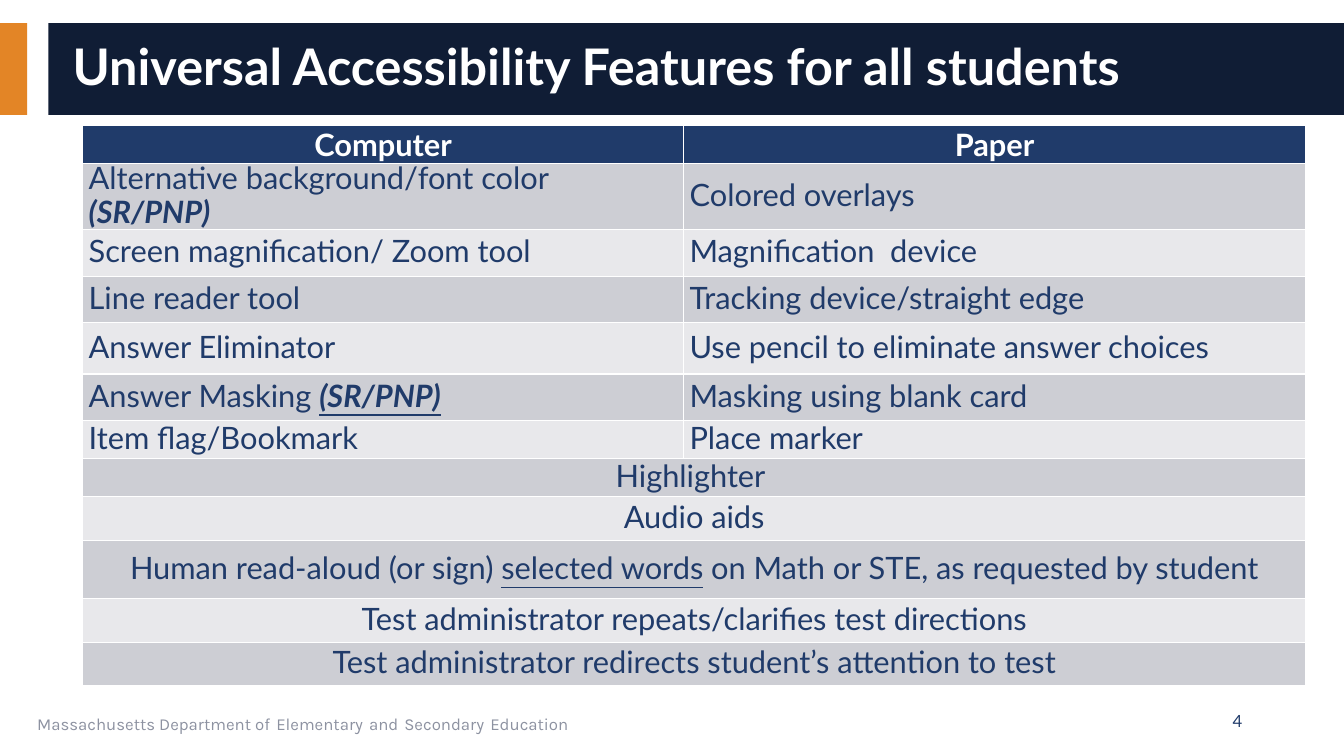
import pptx
import pptx.util
import pptx.dml.color
import pptx.enum.shapes
import pptx.enum.text
import pptx.oxml.ns
import lxml.etree

Inches = pptx.util.Inches
Pt = pptx.util.Pt
ALIGN = pptx.enum.text.PP_ALIGN
ANCHOR = pptx.enum.text.MSO_ANCHOR

COLORS = {
    "orange": "E38526",
    "dark": "101D35",
    "navy": "203B6A",
    "gray": "8D92A1",
    "band_dark": "CDCED4",
    "band_light": "E8E8EB",
    "white": "FFFFFF",
}

TITLE = "Universal Accessibility Features for all students"
FOOTER = ["Massachusetts Department of", "Elementary", "and", "Secondary", "Education"]
SLIDE_NUMBER = "4"

EMPHASIS = {"bold": True, "italic": True}
UNDERLINED = {"bold": True, "italic": True, "underline": True}
HEADER = ["Computer", "Paper"]
FEATURES = [
    (0.63, [[("Alternative background/font color ", {}), ("(", EMPHASIS),
             ("SR/PNP", UNDERLINED), (")", EMPHASIS)], "Colored overlays"]),
    (0.46, ["Screen magnification/ Zoom tool", "Magnification  device"]),
    (0.46, ["Line reader tool", "Tracking device/straight edge"]),
    (0.51, ["Answer Eliminator", "Use pencil to eliminate answer choices"]),
    (0.46, [[("Answer Masking ", {}), ("(SR/PNP)", UNDERLINED)], "Masking using blank card"]),
    (0.38, ["Item flag/Bookmark", "Place marker"]),
    (0.38, ["Highlighter "]),
    (0.43, ["Audio aids"]),
    (0.58, [[("Human read-aloud (or sign) ", {}), ("selected words", {"underline": True}),
             (" on Math or STE, as requested by student", {})]]),
    (0.43, ["Test administrator repeats/clarifies test directions"]),
    (0.43, ["Test administrator redirects student’s attention to test"]),
]
HEADER_HEIGHT = 0.38
COLUMN_WIDTHS = [5.96, 6.17]
BARS = [(0, 0.27, "orange"), (0.48, 12.86, "dark")]


def rgb(name):
    return pptx.dml.color.RGBColor.from_string(COLORS[name])


def write_text(frame, text, size=22, color="navy", font="Lato", align=ALIGN.LEFT,
               anchor=ANCHOR.MIDDLE, line_spacing=None, bold=False):
    frame.word_wrap = True
    frame.vertical_anchor = anchor
    paragraph = frame.paragraphs[0]
    paragraph.alignment = align
    if line_spacing:
        paragraph.line_spacing = line_spacing
    parts = [(text, {})] if isinstance(text, str) else text
    for content, style in parts:
        run = paragraph.add_run()
        run.text = content
        run.font.name = style.get("font", font)
        run.font.size = Pt(style.get("size", size))
        run.font.bold = style.get("bold", bold)
        run.font.italic = style.get("italic", False)
        run.font.underline = style.get("underline", False)
        run.font.color.rgb = rgb(style.get("color", color))


def add_borders(cell):
    properties = cell._tc.get_or_add_tcPr()
    for position, side in enumerate(["lnL", "lnR", "lnT", "lnB"]):
        line = lxml.etree.Element(pptx.oxml.ns.qn("a:" + side), w=str(Pt(1)))
        fill = lxml.etree.SubElement(line, pptx.oxml.ns.qn("a:solidFill"))
        lxml.etree.SubElement(fill, pptx.oxml.ns.qn("a:srgbClr"), val=COLORS["white"])
        properties.insert(position, line)


def format_cell(cell, fill, margin_x, margin_y):
    cell.fill.solid()
    cell.fill.fore_color.rgb = rgb(fill)
    cell.vertical_anchor = ANCHOR.MIDDLE
    cell.margin_left = cell.margin_right = Inches(margin_x)
    cell.margin_top = cell.margin_bottom = Inches(margin_y)
    add_borders(cell)


def add_bars(slide):
    for left, width, color in BARS:
        bar = slide.shapes.add_shape(pptx.enum.shapes.MSO_SHAPE.RECTANGLE, Inches(left),
                                     Inches(0.23), Inches(width), Inches(0.91))
        bar.shadow.inherit = False
        bar.fill.solid()
        bar.fill.fore_color.rgb = rgb(color)
        bar.line.fill.background()


def add_title(slide):
    title = slide.shapes.title
    slide.shapes._spTree.append(title._element)
    title.left, title.top = Inches(0.62), Inches(0.32)
    title.width, title.height = Inches(12.44), Inches(0.74)
    title.text_frame.auto_size = pptx.enum.text.MSO_AUTO_SIZE.NONE
    write_text(title.text_frame, TITLE, size=36, color="white", bold=True, line_spacing=0.9)


def add_features_table(slide):
    heights = [HEADER_HEIGHT] + [height for height, _ in FEATURES]
    table = slide.shapes.add_table(len(heights), len(COLUMN_WIDTHS), Inches(0.82), Inches(1.24),
                                   Inches(sum(COLUMN_WIDTHS)), Inches(sum(heights))).table
    table.horz_banding = False
    for column, width in zip(table.columns, COLUMN_WIDTHS):
        column.width = Inches(width)
    for row, height in zip(table.rows, heights):
        row.height = Inches(height)
    for column, text in enumerate(HEADER):
        cell = table.cell(0, column)
        format_cell(cell, "navy", 0.06, 0)
        write_text(cell.text_frame, text, color="white", bold=True, align=ALIGN.CENTER)
    for row, (height, texts) in enumerate(FEATURES, start=1):
        shared = len(texts) == 1
        roomy = shared and height > 0.4
        for column in range(len(COLUMN_WIDTHS)):
            format_cell(table.cell(row, column), "band_dark" if row % 2 else "band_light",
                        0.1 if roomy else 0.06, 0.05 if roomy else 0)
        if shared:
            table.cell(row, 0).merge(table.cell(row, 1))
        for column, text in enumerate(texts):
            write_text(table.cell(row, column).text_frame, text, line_spacing=0.9,
                       align=ALIGN.CENTER if shared else ALIGN.LEFT)


def add_footer(slide):
    parts = [(FOOTER[0], {})]
    for word in FOOTER[1:]:
        parts += [(" ", {"size": 18, "color": "navy"}), (word, {})]
    footer = slide.shapes.add_textbox(Inches(0.27), Inches(6.95), Inches(8.44), Inches(0.4))
    write_text(footer.text_frame, parts, size=12, color="gray", font="Karla", anchor=ANCHOR.TOP)
    number = slide.shapes.add_textbox(Inches(9.42), Inches(6.95), Inches(3), Inches(0.4))
    write_text(number.text_frame, SLIDE_NUMBER, size=12, align=ALIGN.RIGHT)


def main():
    presentation = pptx.Presentation()
    presentation.slide_width = Inches(13.33)
    presentation.slide_height = Inches(7.5)
    slide = presentation.slides.add_slide(presentation.slide_layouts[5])
    add_bars(slide)
    add_title(slide)
    add_features_table(slide)
    add_footer(slide)
    presentation.save("out.pptx")


if __name__ == "__main__":
    main()
